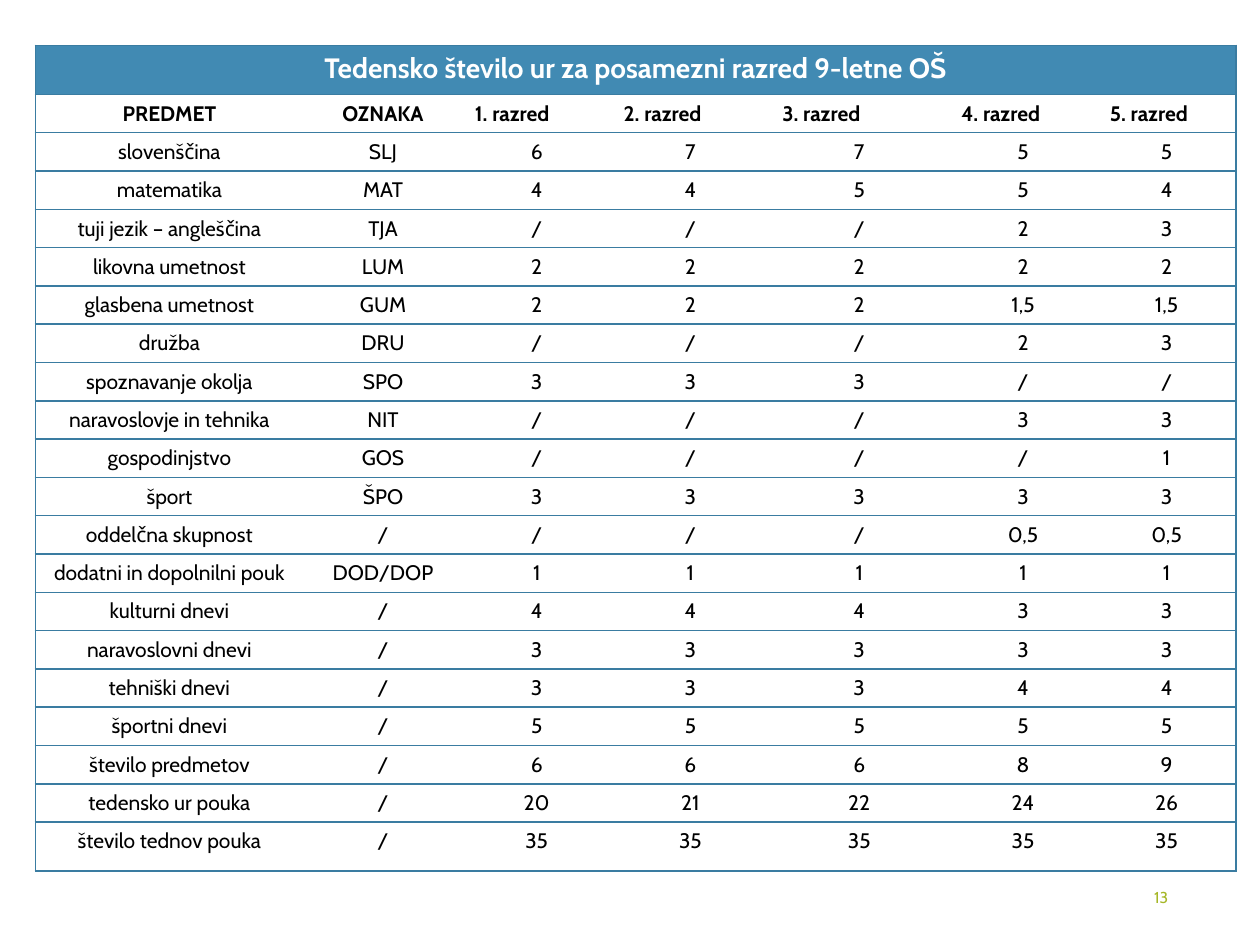
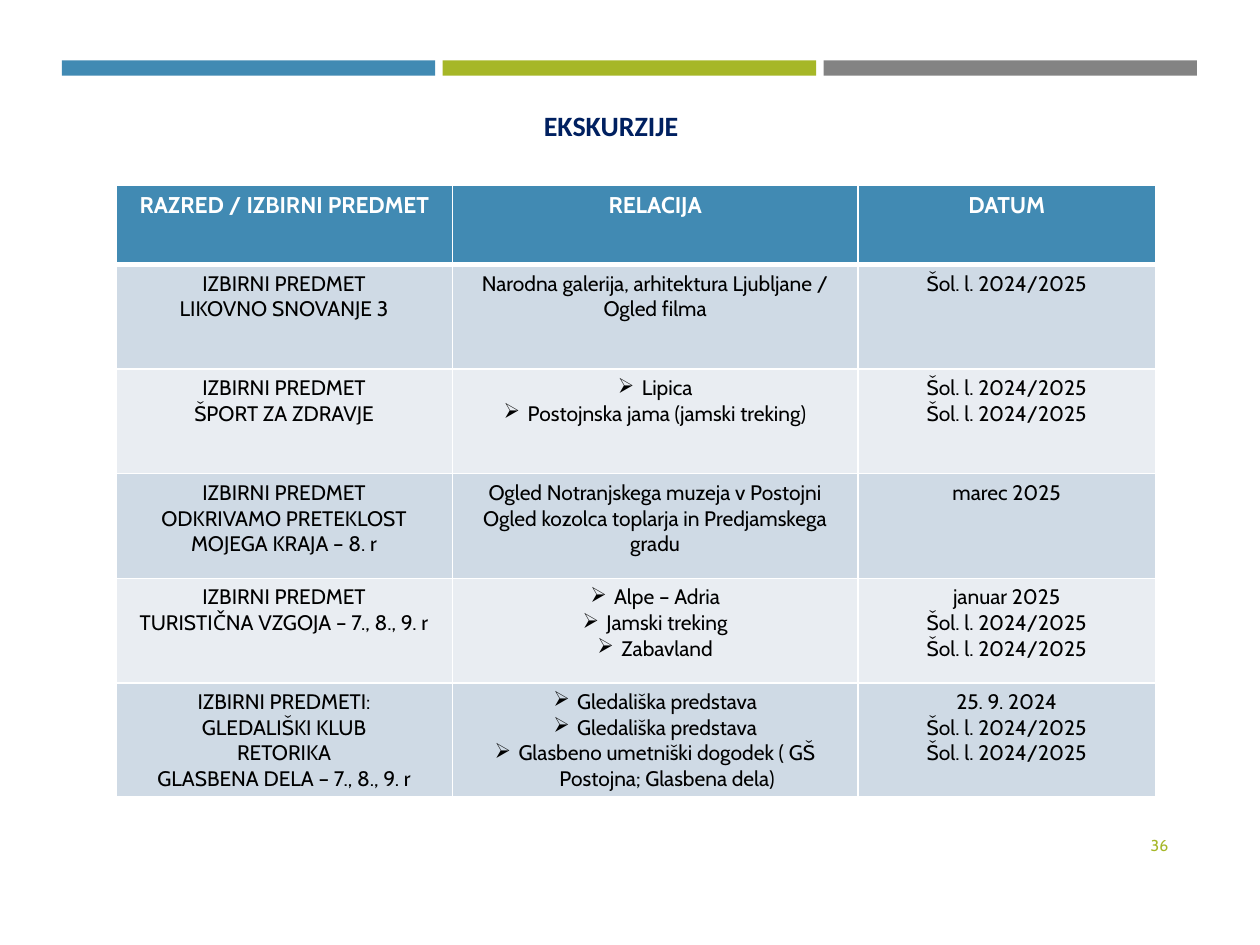
import pptx
import pptx.dml.color
import pptx.enum.shapes
import pptx.enum.text
import pptx.oxml
import pptx.oxml.ns
import pptx.util

Inches = pptx.util.Inches
Pt = pptx.util.Pt
ALIGN = pptx.enum.text.PP_ALIGN
ANCHOR = pptx.enum.text.MSO_ANCHOR

COLORS = {
    "blue": "418AB3", "green": "A6B727", "gray": "838383", "navy": "002060",
    "rule": "3A7CA1", "white": "FFFFFF", "black": "000000",
    "band_dark": "CFDAE5", "band_light": "E9EDF2",
}
FONT = "Cabin"
PLAIN_TABLE_STYLE = "{2D5ABB26-0587-4C30-8999-92F81FD0307C}"

HOURS_TITLE = "Tedensko število ur za posamezni razred 9-letne OŠ"
HOURS_HEADINGS = ["PREDMET", "OZNAKA"] + [f"{grade}. razred" for grade in range(1, 6)]
HOURS = [
    ("slovenščina", "SLJ", "6", "7", "7", "5", "5"),
    ("matematika", "MAT", "4", "4", "5", "5", "4"),
    ("tuji jezik – angleščina", "TJA", "/", "/", "/", "2", "3"),
    ("likovna umetnost", "LUM", "2", "2", "2", "2", "2"),
    ("glasbena umetnost", "GUM", "2", "2", "2", "1,5", "1,5"),
    ("družba", "DRU", "/", "/", "/", "2", "3"),
    ("spoznavanje okolja", "SPO", "3", "3", "3", "/", "/"),
    ("naravoslovje in tehnika", "NIT", "/", "/", "/", "3", "3"),
    ("gospodinjstvo", "GOS", "/", "/", "/", "/", "1"),
    ("šport", "ŠPO", "3", "3", "3", "3", "3"),
    ("oddelčna skupnost", "/", "/", "/", "/", "0,5", "0,5"),
    ("dodatni in dopolnilni pouk", "DOD/DOP", "1", "1", "1", "1", "1"),
    ("kulturni dnevi", "/", "4", "4", "4", "3", "3"),
    ("naravoslovni dnevi", "/", "3", "3", "3", "3", "3"),
    ("tehniški dnevi", "/", "3", "3", "3", "4", "4"),
    ("športni dnevi", "/", "5", "5", "5", "5", "5"),
    ("število predmetov", "/", "6", "6", "6", "8", "9"),
    ("tedensko ur pouka", "/", "20", "21", "22", "24", "26"),
    ("število tednov pouka", "/", "35", "35", "35", "35", "35"),
]
HOURS_WIDTHS = [2.13, 1.26, 1.18, 1.26, 1.42, 1.18, 1.1]

TRIPS_TITLE = "EKSKURZIJE"
TRIPS_HEADINGS = ("RAZRED / IZBIRNI PREDMET", "RELACIJA", "DATUM")
SCHOOL_YEAR = "Šol. l. 2024/2025"
# A list inside a cell is bulleted; a string is plain lines.
TRIPS = [
    ("IZBIRNI PREDMET\nLIKOVNO SNOVANJE 3",
     "Narodna galerija, arhitektura Ljubljane / Ogled filma",
     SCHOOL_YEAR),
    ("IZBIRNI PREDMET\nŠPORT ZA ZDRAVJE",
     ["Lipica", "Postojnska jama (jamski treking)"],
     f"{SCHOOL_YEAR}\n{SCHOOL_YEAR}"),
    ("IZBIRNI PREDMET\nODKRIVAMO PRETEKLOST MOJEGA KRAJA – 8. r",
     "Ogled Notranjskega muzeja v Postojni\nOgled kozolca toplarja in Predjamskega gradu",
     "marec 2025"),
    ("IZBIRNI PREDMET\nTURISTIČNA VZGOJA – 7., 8., 9. r",
     ["Alpe – Adria", "Jamski treking", "Zabavland"],
     f"januar 2025\n{SCHOOL_YEAR}\n{SCHOOL_YEAR}"),
    ("IZBIRNI PREDMETI:\nGLEDALIŠKI KLUB\nRETORIKA\nGLASBENA DELA – 7., 8., 9. r",
     ["Gledališka predstava", "Gledališka predstava",
      "Glasbeno umetniški dogodek ( GŠ Postojna; Glasbena dela)"],
     f"25. 9. 2024\n{SCHOOL_YEAR}\n{SCHOOL_YEAR}"),
]
TRIPS_WIDTHS = [2.67, 3.22, 2.36]

TEXT = {"size": Pt(12), "bold": False, "color": "black"}
HOURS_HEADING = {**TEXT, "bold": True}
HOURS_BANNER = {"size": Pt(16), "bold": True, "color": "white"}
TRIPS_HEADING = {"size": Pt(13), "bold": True, "color": "white"}
PAGE_NUMBER = {"size": Pt(9), "color": "green"}
TITLE = {"size": Pt(16), "bold": True, "color": "navy", "name": "Calibri"}


def rgb(color):
    return pptx.dml.color.RGBColor.from_string(COLORS[color])


def add_child(parent, tag, **attributes):
    child = pptx.oxml.parse_xml(f"<a:{tag} {pptx.oxml.ns.nsdecls('a')}/>")
    for name, value in attributes.items():
        child.set(name, str(value))
    parent.append(child)
    return child


def write(frame, content, style, align=ALIGN.CENTER):
    bulleted = isinstance(content, list)
    lines = content if bulleted else content.split("\n")
    for index, line in enumerate(lines):
        para = frame.paragraphs[0] if index == 0 else frame.add_paragraph()
        para.alignment = align
        if bulleted:
            properties = para._p.get_or_add_pPr()
            properties.set("marL", str(Inches(0.19)))
            properties.set("indent", str(-Inches(0.19)))
            add_child(properties, "buChar", char="➢")
        span = para.add_run()
        span.text = line
        for name, value in {"name": FONT, **style}.items():
            if name == "color":
                span.font.color.rgb = rgb(value)
            else:
                setattr(span.font, name, value)


def set_borders(cell, borders):
    """Draw the sides given as {side: (colour, points)}; sides are L, R, T, B."""
    properties = cell._tc.get_or_add_tcPr()
    for side in "LRTB":
        if side in borders:
            color, weight = borders[side]
            line = add_child(properties, f"ln{side}", w=Pt(weight))
            add_child(add_child(line, "solidFill"), "srgbClr", val=COLORS[color])


def add_plain_table(page, left, top, widths, heights):
    holder = page.shapes.add_table(
        len(heights), len(widths), Inches(left), Inches(top),
        Inches(sum(widths)), Inches(sum(heights)))
    holder.element.xpath(".//a:tableStyleId")[0].text = PLAIN_TABLE_STYLE
    table = holder.table
    table.first_row = table.horz_banding = False
    for column, width in zip(table.columns, widths):
        column.width = Inches(width)
    for row, height in zip(table.rows, heights):
        row.height = Inches(height)
    return table


def fill_cell(cell, color):
    cell.fill.solid()
    cell.fill.fore_color.rgb = rgb(color)


def add_layout_bands(page):
    """Place the three top bands on the layout that all pages share."""
    left, right, gap = 0.49, 9.5, 0.06
    colors = ("blue", "green", "gray")
    width = (right - left - gap * (len(colors) - 1)) / len(colors)
    for index, color in enumerate(colors):
        band = page.shapes.add_shape(
            pptx.enum.shapes.MSO_SHAPE.RECTANGLE,
            Inches(left + index * (width + gap)), Inches(0.48),
            Inches(width), Inches(0.12))
        band.shadow.inherit = False
        band.fill.solid()
        band.fill.fore_color.rgb = rgb(color)
        band.line.fill.background()
        page.slide_layout.shapes.element.append(band.element)


def add_page_number(page, number, top=6.51):
    box = page.shapes.add_textbox(Inches(8.53), Inches(top), Inches(0.84), Inches(0.4))
    box.text_frame.word_wrap = True
    box.text_frame.vertical_anchor = ANCHOR.MIDDLE
    write(box.text_frame, number, PAGE_NUMBER, ALIGN.RIGHT)


def build_hours(page):
    title = page.shapes.title
    title.element.getparent().remove(title.element)
    top, total, edge = 0.36, 6.56, 0.39
    add_page_number(page, "13", top + total)
    inner = (total - 2 * edge) / len(HOURS)
    heights = [edge] + [inner] * len(HOURS) + [edge]
    table = add_plain_table(page, 0.28, top, HOURS_WIDTHS, heights)
    last = len(HOURS_WIDTHS) - 1
    rule = ("rule", 1)
    for row in range(len(heights)):
        for column in range(last + 1):
            sides = "TB" + "L" * (column == 0) + "R" * (column == last or row == 0)
            set_borders(table.cell(row, column), dict.fromkeys(sides, rule))
    banner = table.cell(0, 0)
    banner.merge(table.cell(0, last))
    fill_cell(banner, "blue")
    write(banner.text_frame, HOURS_TITLE, HOURS_BANNER)
    for row, values in enumerate([HOURS_HEADINGS] + HOURS, start=1):
        for column, value in enumerate(values):
            heading = row == 1
            align = ALIGN.LEFT if heading and column > 1 else ALIGN.CENTER
            write(table.cell(row, column).text_frame, value,
                  HOURS_HEADING if heading else TEXT, align)


def build_trips(page):
    add_page_number(page, "36")
    heights = [0.63] + [0.83] * len(TRIPS)
    table = add_plain_table(page, 0.92, 1.47, TRIPS_WIDTHS, heights)
    for row, values in enumerate([TRIPS_HEADINGS] + TRIPS):
        band = "blue" if row == 0 else "band_dark" if row % 2 else "band_light"
        borders = dict.fromkeys("LRTB", ("white", 1))
        if row < 2:
            borders["B" if row == 0 else "T"] = ("white", 3)
        for column, value in enumerate(values):
            cell = table.cell(row, column)
            set_borders(cell, borders)
            fill_cell(cell, band)
            write(cell.text_frame, value, TEXT if row else TRIPS_HEADING)

    title = page.shapes.title
    place = {"left": 0.54, "top": 0.84, "width": 8.62, "height": 0.44}
    for name, value in place.items():
        setattr(title, name, Inches(value))
    frame = title.text_frame
    frame.auto_size = pptx.enum.text.MSO_AUTO_SIZE.NONE
    frame.vertical_anchor = ANCHOR.TOP
    write(frame, TRIPS_TITLE, TITLE)
    frame.paragraphs[0].line_spacing = 0.9


def main():
    deck = pptx.Presentation()
    deck.slide_width, deck.slide_height = Inches(10), Inches(7.5)
    layout = deck.slide_layouts[5]
    hours_page, trips_page = (deck.slides.add_slide(layout) for _ in range(2))
    add_layout_bands(hours_page)
    build_hours(hours_page)
    build_trips(trips_page)
    deck.save("out.pptx")


if __name__ == "__main__":
    main()
